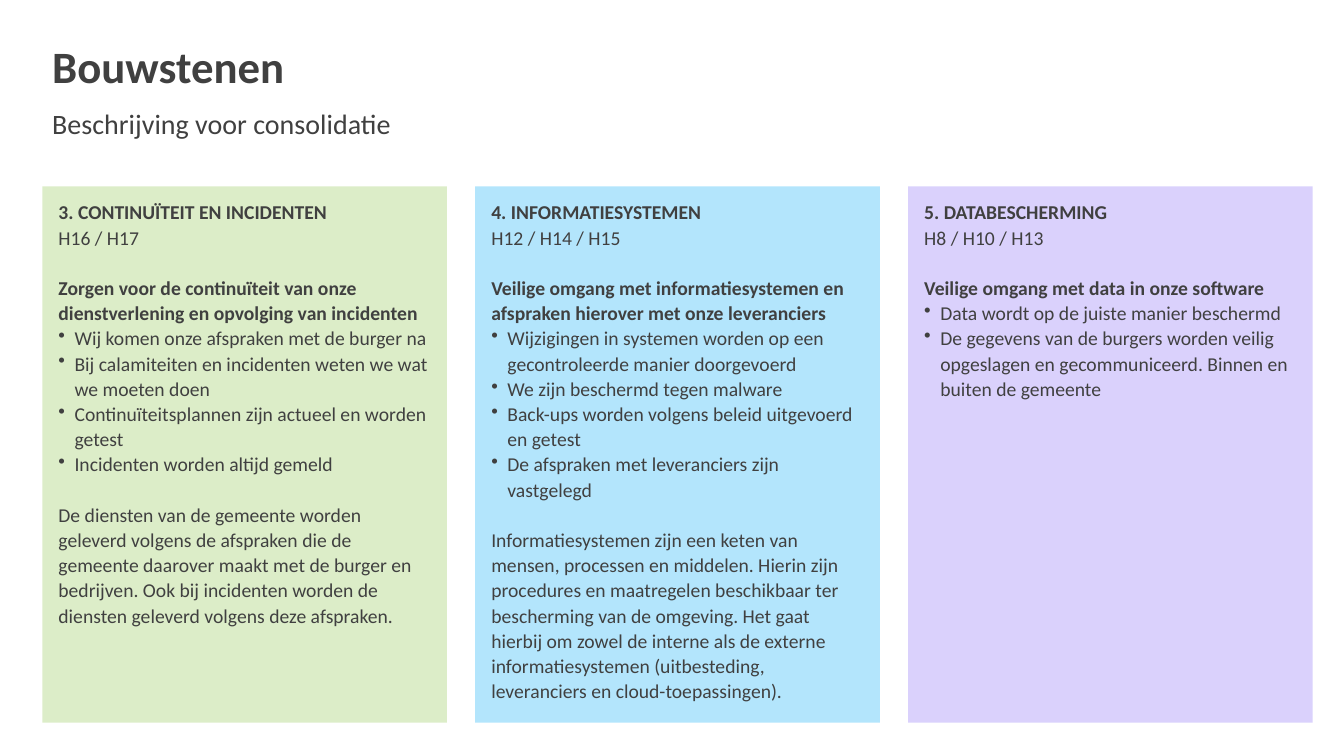
from lxml import etree
from pptx import Presentation
from pptx.dml.color import RGBColor
from pptx.enum.shapes import MSO_SHAPE
from pptx.enum.text import MSO_ANCHOR, PP_ALIGN
from pptx.oxml.ns import qn
from pptx.util import Inches, Pt

RECT = MSO_SHAPE.RECTANGLE
TOP = MSO_ANCHOR.TOP
LEFT = PP_ALIGN.LEFT

GREEN = RGBColor(0xDC, 0xED, 0xC8)
BLUE = RGBColor(0xB3, 0xE5, 0xFC)
PURPLE = RGBColor(0xDA, 0xD1, 0xFC)
DARK = RGBColor(0x40, 0x40, 0x40)
FONT = "Calibri"

# Each card: colour, heading, chapters, goal, bullets, closing text
CARDS = [
    (GREEN, "3. CONTINUÏTEIT EN INCIDENTEN", "H16 / H17",
     "Zorgen voor de continuïteit van onze dienstverlening en opvolging van incidenten",
     ["Wij komen onze afspraken met de burger na",
      "Bij calamiteiten en incidenten weten we wat we moeten doen",
      "Continuïteitsplannen zijn actueel en worden getest",
      "Incidenten worden altijd gemeld"],
     "De diensten van de gemeente worden geleverd volgens de afspraken die de "
     "gemeente daarover maakt met de burger en bedrijven. Ook bij incidenten "
     "worden de diensten geleverd volgens deze afspraken."),
    (BLUE, "4. INFORMATIESYSTEMEN", "H12 / H14 / H15",
     "Veilige omgang met informatiesystemen en afspraken hierover met onze leveranciers",
     ["Wijzigingen in systemen worden op een gecontroleerde manier doorgevoerd",
      "We zijn beschermd tegen malware",
      "Back-ups worden volgens beleid uitgevoerd en getest",
      "De afspraken met leveranciers zijn vastgelegd"],
     "Informatiesystemen zijn een keten van mensen, processen en middelen. "
     "Hierin zijn procedures en maatregelen beschikbaar ter bescherming van de "
     "omgeving. Het gaat hierbij om zowel de interne als de externe "
     "informatiesystemen (uitbesteding, leveranciers en cloud-toepassingen)."),
    (PURPLE, "5. DATABESCHERMING", "H8 / H10 / H13",
     "Veilige omgang met data in onze software",
     ["Data wordt op de juiste manier beschermd",
      "De gegevens van de burgers worden veilig opgeslagen en gecommuniceerd. "
      "Binnen en buiten de gemeente"],
     None),
]


def add_line(frame, text, size, pitch, bold=False, gap=0):
    """Add a paragraph, using the empty first one if it is still free."""
    para = frame.paragraphs[0]
    if para.runs:
        para = frame.add_paragraph()
    para.add_run().text = text
    para.alignment = LEFT
    para.line_spacing = Pt(pitch)
    para.space_before = Pt(gap)
    font = para.font
    font.name, font.size, font.bold = FONT, Pt(size), bold
    font.color.rgb = DARK
    return para


def add_bullet(para):
    props = para._p.get_or_add_pPr()
    props.set("marL", str(Inches(0.16)))
    props.set("indent", str(-Inches(0.16)))
    mark = etree.Element(qn("a:buChar"), char="•")
    props.find(qn("a:defRPr")).addprevious(mark)


def add_title(slide, left, top, width, height):
    box = slide.shapes.add_textbox(
        Inches(left), Inches(top), Inches(width), Inches(height))
    frame = box.text_frame
    frame.word_wrap = True
    add_line(frame, "Bouwstenen", 32, 34, bold=True)
    add_line(frame, "Beschrijving voor consolidatie", 20, 34)


def add_card(slide, left, top, width, height, card):
    fill, head, codes, goal, points, close = card
    box = slide.shapes.add_shape(
        RECT, Inches(left), Inches(top), Inches(width), Inches(height))
    box.shadow.inherit = False
    box.fill.solid()
    box.fill.fore_color.rgb = fill
    box.line.fill.background()
    frame = box.text_frame
    frame.word_wrap = True
    frame.vertical_anchor = TOP
    frame.margin_left = frame.margin_right = frame.margin_bottom = Inches(0.16)
    frame.margin_top = Inches(0.12)

    add_line(frame, head, 14, 18, bold=True)
    add_line(frame, codes, 14, 18)
    add_line(frame, goal, 14, 18, bold=True, gap=18)
    for point in points:
        add_bullet(add_line(frame, point, 14, 18))
    if close:
        add_line(frame, close, 14, 18, gap=18)


def add_cards(slide, left, top, width, height, gap):
    """Set the cards side by side with equal gaps."""
    wide = (width - gap * (len(CARDS) - 1)) / len(CARDS)
    for i, card in enumerate(CARDS):
        add_card(slide, left + i * (wide + gap), top, wide, height, card)


def main():
    deck = Presentation()
    deck.slide_width, deck.slide_height = Inches(13.33), Inches(7.5)
    slide = deck.slides.add_slide(deck.slide_layouts[6])
    add_title(slide, 0.42, 0.4, 11.5, 1.45)
    add_cards(slide, 0.42, 1.85, 12.6, 5.32, 0.28)
    deck.save("out.pptx")


if __name__ == "__main__":
    main()
